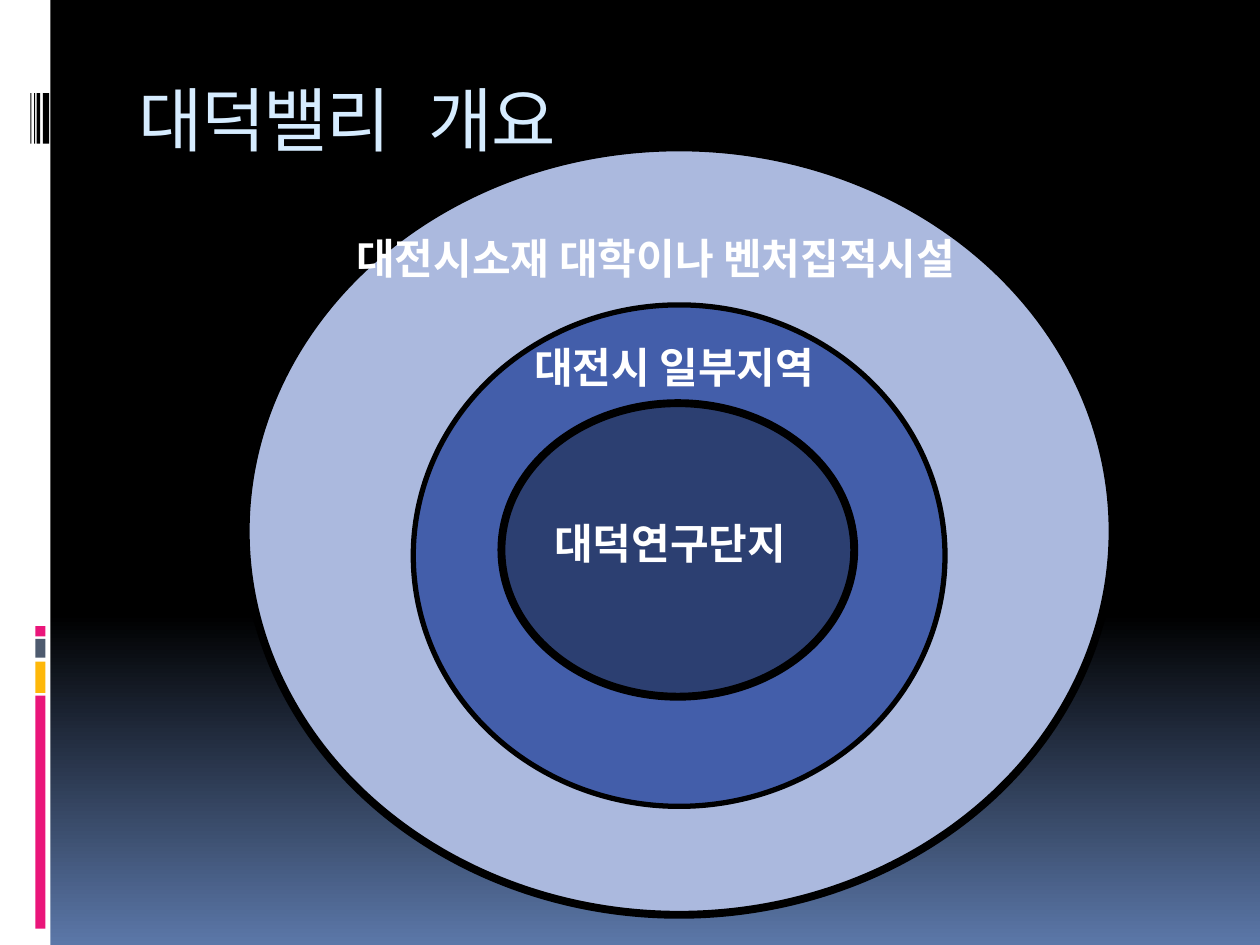
"""Build the Daedeok Valley overview slide with nested rings."""
from typing import NamedTuple

from lxml.etree import SubElement as Sub
from pptx import Presentation as Deck
from pptx.dml.color import RGBColor as Color
from pptx.enum.shapes import MSO_SHAPE as Kind
from pptx.enum.text import MSO_ANCHOR as Anchor, PP_ALIGN as Align
from pptx.oxml.ns import qn
from pptx.util import Inches, Pt

WHITE = Color(0xFF, 0xFF, 0xFF)
BLACK = Color(0, 0, 0)
PINK = Color(0xEA, 0x15, 0x7A)
AMBER = Color(0xFE, 0xB8, 0x0A)
SLATE = Color(0x4E, 0x5B, 0x6F)
DUSK = Color(0x5B, 0x77, 0xA8)
SKY = Color(0xD6, 0xEC, 0xFF)
PALE = Color(0xAB, 0xB9, 0xDE)
BLUE = Color(0x43, 0x5E, 0xAA)
NAVY = Color(0x2C, 0x3F, 0x71)

COLS, ROWS = 100, 75
WIDE, HIGH = Inches(10), Inches(7.5)


class Box(NamedTuple):
    """Place on the grid, in columns and rows."""
    col: float
    row: float
    cols: float
    rows: float


class Block(NamedTuple):
    """Filled shape, outlined when its edge is above zero."""
    box: Box
    fill: Color
    kind: Kind = Kind.RECTANGLE
    edge: float = 0


class Label(NamedTuple):
    """Bold caption on a ring."""
    box: Box
    text: str


def band(row: float, rows: float, fill: Color) -> Block:
    """Return one piece of the coloured side strip."""
    return Block(Box(2.8, row, 0.8, rows), fill)


def stripe(col: float, cols: float) -> Block:
    """Return one bar of the black side code."""
    return Block(Box(col, 7.4, cols, 4), BLACK)


def ring(box: Box, fill: Color, edge: float) -> Block:
    """Return one outlined ellipse."""
    return Block(box, fill, Kind.OVAL, edge)


BLOCKS = [
    Block(Box(0, 0, 4, ROWS), WHITE),
    band(55.2, 18.5, PINK),
    band(52.5, 2.5, AMBER),
    band(50.7, 1.5, SLATE),
    band(49.7, 0.8, PINK),
    stripe(3.4, 0.5),
    stripe(2.9, 0.3),
    stripe(2.7, 0.1),
    stripe(2.4, 0.1),
    ring(Box(19.5, 11.7, 68.8, 60.9), PALE, 4.5),
    ring(Box(32.8, 24.2, 42.2, 39.8), BLUE, 3),
    ring(Box(39.8, 32, 28, 23.3), NAVY, 4.5),
]
LABELS = [
    Label(Box(41.4, 26.6, 27.3, 5), "대전시 일부지역"),
    Label(Box(27.3, 18, 53.9, 5), "대전시소재 대학이나 벤처집적시설"),
    Label(Box(43, 40.6, 24.2, 5), "대덕연구단지"),
]


def span(box: Box) -> tuple[int, int, int, int]:
    """Turn a grid box into slide lengths."""
    wide, high = WIDE / COLS, HIGH / ROWS
    return (round(box.col * wide), round(box.row * high),
            round(box.cols * wide), round(box.rows * high))


def shade(slide) -> None:
    """Fill the background black, fading to blue at the foot."""
    fill = slide.background.fill
    fill.gradient()
    grad = slide.background._cSld.find(".//" + qn("a:gradFill"))
    for node in list(grad):
        grad.remove(node)
    stops = Sub(grad, qn("a:gsLst"))
    for share, tone in ((0, BLACK), (65, BLACK), (100, DUSK)):
        stop = Sub(stops, qn("a:gs"), pos=str(share * 1000))
        Sub(stop, qn("a:srgbClr"), val=str(tone))
    Sub(grad, qn("a:lin"), ang="5400000", scaled="0")


def draw(slide, block: Block) -> None:
    """Draw one filled shape."""
    shape = slide.shapes.add_shape(block.kind, *span(block.box))
    shape.shadow.inherit = False
    shape.fill.solid()
    shape.fill.fore_color.rgb = block.fill
    if block.edge:
        shape.line.color.rgb = BLACK
        shape.line.width = Pt(block.edge)
    else:
        shape.line.fill.background()


def write(frame, text: str, size: float, face: str, tone: Color,
          bold: bool = False):
    """Add one left-aligned run to a text frame and return it."""
    frame.word_wrap = True
    frame.vertical_anchor = Anchor.TOP
    para = frame.paragraphs[0]
    para.alignment = Align.LEFT
    run = para.add_run()
    run.text = text
    font = run.font
    font.size, font.name, font.bold = Pt(size), face, bold
    font.color.rgb = tone
    Sub(font._element, qn("a:ea"), typeface=face)
    return run


def head(slide, box: Box, text: str) -> None:
    """Move and fill the title placeholder."""
    title = slide.shapes.title
    title.left, title.top, title.width, title.height = span(box)
    run = write(title.text_frame, text, 40, "Noto Sans Mono", SKY)
    run.font._element.set("spc", "-100")


def note(slide, label: Label) -> None:
    """Add one ring caption."""
    frame = slide.shapes.add_textbox(*span(label.box)).text_frame
    write(frame, label.text, 24, "Calibri", WHITE, True)


def main() -> None:
    """Build and save the deck."""
    deck = Deck()
    deck.slide_width, deck.slide_height = WIDE, HIGH
    slide = deck.slides.add_slide(deck.slide_layouts[5])
    shade(slide)
    head(slide, Box(10, 5.6, 85, 10), "대덕밸리 개요")
    for block in BLOCKS:
        draw(slide, block)
    for label in LABELS:
        note(slide, label)
    deck.save("out.pptx")


if __name__ == "__main__":
    main()
